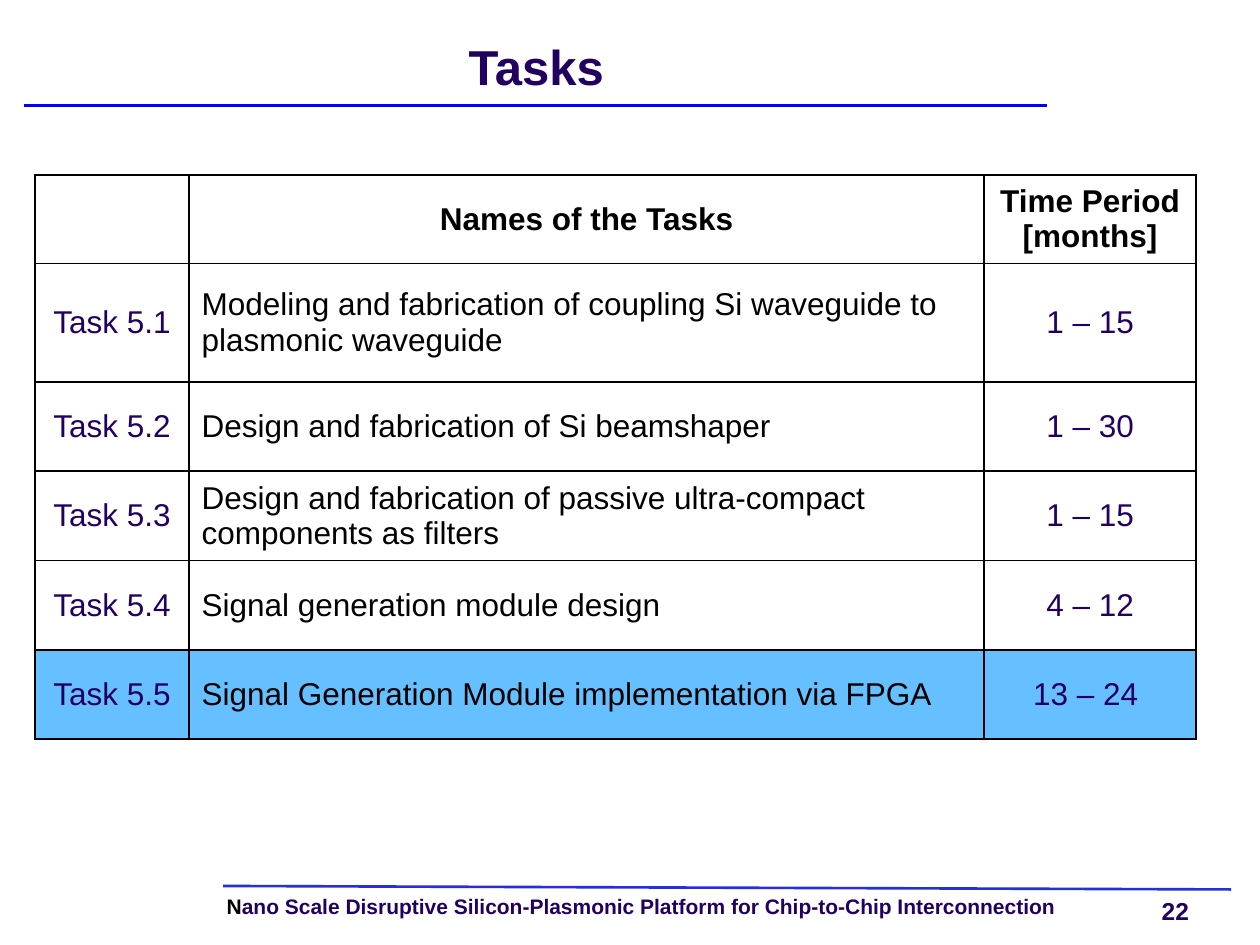
"""Build the slide listing the tasks with their time periods."""
from lxml import etree
from pptx import Presentation
from pptx.dml.color import RGBColor
from pptx.enum.shapes import MSO_CONNECTOR
from pptx.enum.text import MSO_ANCHOR, PP_ALIGN
from pptx.oxml.ns import qn
from pptx.util import Cm, Pt

CENTER, LEFT = PP_ALIGN.CENTER, PP_ALIGN.LEFT
MIDDLE, TOP = MSO_ANCHOR.MIDDLE, MSO_ANCHOR.TOP
STRAIGHT = MSO_CONNECTOR.STRAIGHT

BLACK = RGBColor(0x00, 0x00, 0x00)
PURPLE = RGBColor(0x22, 0x00, 0x60)
BLUE = RGBColor(0x00, 0x00, 0xFF)
FOOTER_BLUE = RGBColor(0x26, 0x2F, 0xDA)
HIGHLIGHT = RGBColor(0x66, 0xC0, 0xFF)
FONT = "Arial"

TITLE = "Tasks"
FOOTER = [
    ("N", BLACK),
    ("ano Scale Disruptive Silicon-Plasmonic Platform for Chip-to-Chip Interconnection", PURPLE),
]
PAGE_NUMBER = "22"
HEADER = ("", "Names of the Tasks", "Time Period [months]")
TASKS = [
    ("Task 5.1", "Modeling and fabrication of coupling Si waveguide to plasmonic waveguide", "1 – 15"),
    ("Task 5.2", "Design and fabrication of Si beamshaper", "1 – 30"),
    ("Task 5.3", "Design and fabrication of passive ultra-compact components as filters", "1 – 15"),
    ("Task 5.4", "Signal generation module design", "4 – 12"),
    ("Task 5.5", "Signal Generation Module implementation via FPGA", "13 – 24 "),
]
HIGHLIGHTED_TASK = "Task 5.5"
COLUMN_WIDTHS = (3.1, 16.03, 4.27)
ROW_HEIGHTS = (1.68, 2.39, 1.8, 1.8, 1.8, 1.8)
RULES = [
    (0.48, 2.13, 21.11, 2.13, BLUE),
    (4.5, 17.86, 24.82, 17.93, FOOTER_BLUE),
]


def add_run(paragraph, text, size, color, bold):
    run = paragraph.add_run()
    run.text = text
    run.font.name = FONT
    run.font.size = Pt(size)
    run.font.bold = bold
    run.font.color.rgb = color


def add_text(slide, box, runs, size, alignment=LEFT, anchor=TOP, spacing=None, wrap=True):
    frame = slide.shapes.add_textbox(*map(Cm, box)).text_frame
    frame.margin_left = frame.margin_right = frame.margin_top = frame.margin_bottom = 0
    frame.word_wrap = wrap
    frame.vertical_anchor = anchor
    paragraph = frame.paragraphs[0]
    paragraph.alignment = alignment
    paragraph.line_spacing = spacing
    for text, color in runs:
        add_run(paragraph, text, size, color, True)


def add_rule(slide, left, top, right, bottom, color):
    rule = slide.shapes.add_connector(STRAIGHT, Cm(left), Cm(top), Cm(right), Cm(bottom))
    rule.line.color.rgb = color
    rule.line.width = Pt(1.5)
    etree.SubElement(rule._element.spPr, qn("a:effectLst"))


def add_borders(cell):
    properties = cell._tc.get_or_add_tcPr()
    for position, side in enumerate(("lnL", "lnR", "lnT", "lnB")):
        border = etree.Element(qn(f"a:{side}"), w=str(Pt(1)))
        fill = etree.SubElement(border, qn("a:solidFill"))
        etree.SubElement(fill, qn("a:srgbClr"), val=str(BLACK))
        properties.insert(position, border)


def add_task_table(slide):
    rows = [HEADER, *TASKS]
    table = slide.shapes.add_table(
        len(rows), len(HEADER), Cm(0.71), Cm(3.53),
        Cm(sum(COLUMN_WIDTHS)), Cm(sum(ROW_HEIGHTS)),
    ).table
    table.horz_banding = False
    for column, width in zip(table.columns, COLUMN_WIDTHS):
        column.width = Cm(width)
    for row_index, values in enumerate(rows):
        table.rows[row_index].height = Cm(ROW_HEIGHTS[row_index])
        is_header = row_index == 0
        for column_index, text in enumerate(values):
            is_name = column_index == 1
            cell = table.cell(row_index, column_index)
            cell.vertical_anchor = MIDDLE
            if values[0] == HIGHLIGHTED_TASK:
                cell.fill.solid()
                cell.fill.fore_color.rgb = HIGHLIGHT
            else:
                cell.fill.background()
            add_borders(cell)
            if text:
                paragraph = cell.text_frame.paragraphs[0]
                paragraph.alignment = LEFT if is_name and not is_header else CENTER
                color = BLACK if is_header or is_name else PURPLE
                add_run(paragraph, text, 18, color, is_header)


def main():
    presentation = Presentation()
    presentation.slide_width, presentation.slide_height = Cm(25.4), Cm(19.05)
    slide = presentation.slides.add_slide(presentation.slide_layouts[6])
    add_text(slide, (4.57, 18.06, 18.14, 0.46), FOOTER, 12, spacing=0.9)
    add_text(slide, (23.42, 18.06, 1.02, 0.58), [(PAGE_NUMBER, PURPLE)], 14, wrap=False)
    for rule in RULES:
        add_rule(slide, *rule)
    add_text(slide, (0.51, 0.51, 20.6, 1.7), [(TITLE, PURPLE)], 28, CENTER, MIDDLE, Pt(32))
    add_task_table(slide)
    presentation.save("out.pptx")


if __name__ == "__main__":
    main()
